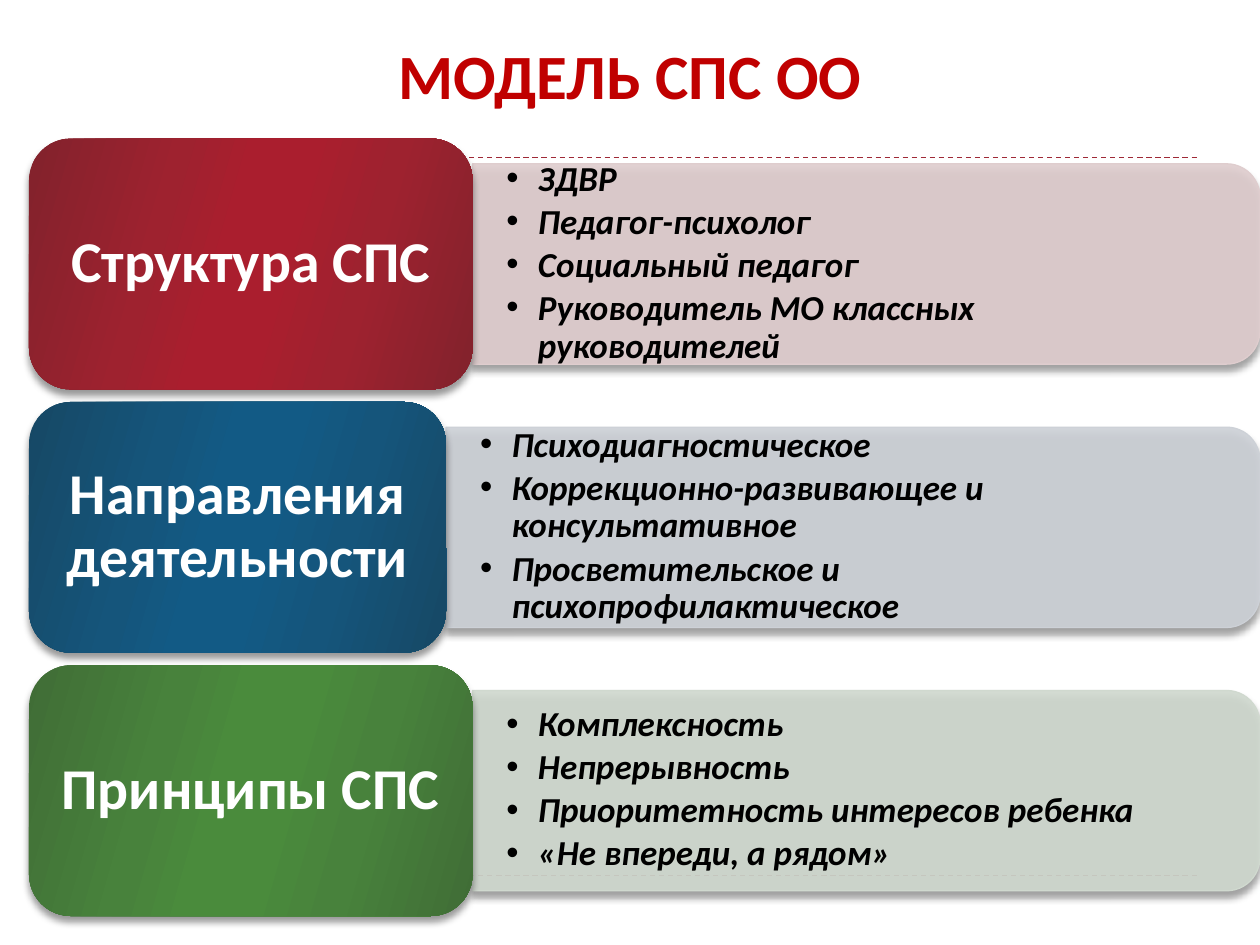
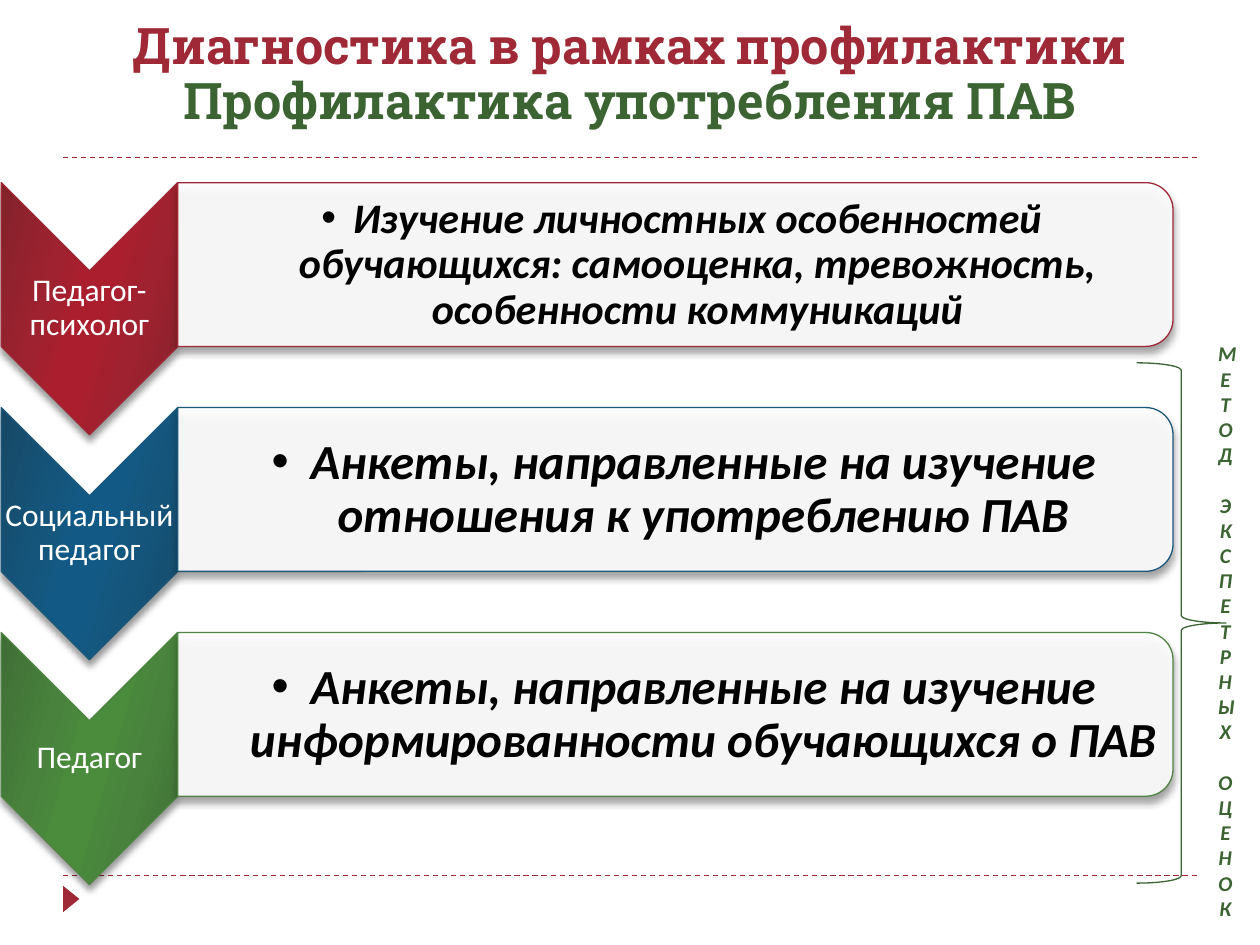
import pptx
import pptx.util
import pptx.dml.color
import pptx.enum.dml
import pptx.enum.shapes
import pptx.enum.text
import pptx.oxml
import pptx.oxml.ns
from lxml import etree

Inches, Pt = pptx.util.Inches, pptx.util.Pt
RGB = pptx.dml.color.RGBColor.from_string
SHAPE = pptx.enum.shapes.MSO_SHAPE
ANCHOR = pptx.enum.text.MSO_ANCHOR
ALIGN = pptx.enum.text.PP_ALIGN
qn = pptx.oxml.ns.qn
NS = pptx.oxml.ns.nsdecls("a")

COLORS = {
    "red": "9F2936", "blue": "1B587C", "green": "4E8542",
    "title_red": "C00000", "dark_green": "3B6432",
    "white": "FFFFFF", "black": "000000",
}
TINTS = {"red": "DFCDCE", "blue": "CDD1D7", "green": "D0D9CF"}
# edge, inner and centre colours of the symmetric gradients
GRADIENTS = {
    "red": ("82222C", "9E222F", "AA1E2E"),
    "blue": ("164865", "15557B", "125A85"),
    "green": ("406D36", "48823C", "4A8B3C"),
}
STOPS = ((0, 0), (30, 1), (45, 2), (55, 2), (73, 1), (100, 0))

BULLET_FONT = {"name": "Calibri", "bold": True, "italic": True}
LABEL_FONT = {"name": "Calibri"}


def add_block(s, kind, box, fill, line=None, turned=False):
    """Add a shadowed shape that fills box; turned means rotated by 90 degrees.

    fill is a hex string (10% transparent) or a tuple of gradient colours.
    """
    x, y, w, h = box
    if turned:
        x, y, w, h = x + (w - h) / 2, y + (h - w) / 2, h, w
    sp = s.shapes.add_shape(kind, *map(Inches, (x, y, w, h)))
    sp.rotation = 90 if turned else 0
    sp.fill.solid()
    props = sp._element.spPr
    solid = props.find(qn("a:solidFill"))
    if isinstance(fill, tuple):
        stops = "".join(
            f'<a:gs pos="{pos * 1000}"><a:srgbClr val="{fill[i]}"/></a:gs>' for pos, i in STOPS)
        props.replace(solid, pptx.oxml.parse_xml(
            f'<a:gradFill {NS} rotWithShape="0"><a:gsLst>{stops}</a:gsLst>'
            '<a:lin ang="960000" scaled="0"/></a:gradFill>'))
    else:
        sp.fill.fore_color.rgb = RGB(fill)
        etree.SubElement(solid[0], qn("a:alpha"), val="90000")
    if line:
        sp.line.color.rgb = RGB(line)
        sp.line.width = Pt(0.75)
    else:
        sp.line.fill.background()
    sp.shadow.inherit = False
    props.find(qn("a:effectLst")).append(pptx.oxml.parse_xml(
        f'<a:outerShdw {NS} blurRad="50800" dist="43000" dir="5400000" rotWithShape="0">'
        '<a:srgbClr val="000000"><a:alpha val="40000"/></a:srgbClr></a:outerShdw>'))


def add_text(s, box, lines, size, color, font, insets=(0.1, 0.05, 0.1, 0.05),
             anchor=ANCHOR.MIDDLE, align=ALIGN.CENTER, spacing=0.9, indent=0):
    """Add a text box with one paragraph per line; an indent makes them bullets."""
    tf = s.shapes.add_textbox(*map(Inches, box)).text_frame
    tf.word_wrap = True
    tf.vertical_anchor = anchor
    for side, inset in zip(("left", "top", "right", "bottom"), insets):
        setattr(tf, f"margin_{side}", Inches(inset))
    for i, line in enumerate(lines):
        p = tf.paragraphs[0] if i == 0 else tf.add_paragraph()
        p.alignment = align
        p.line_spacing = spacing
        if indent:
            p.space_after = Pt(round(size * 0.15, 1))
            pPr = p._p.get_or_add_pPr()
            pPr.set("marL", str(Inches(indent)))
            pPr.set("indent", str(-Inches(indent)))
            etree.SubElement(pPr, qn("a:buFont"), typeface="Arial")
            etree.SubElement(pPr, qn("a:buChar"), char="•")
        r = p.add_run()
        r.text = line
        for key, value in font.items():
            setattr(r.font, key, value)
        r.font.size = Pt(size)
        r.font.color.rgb = RGB(color)
    return tf


prs = pptx.Presentation()
prs.slide_width, prs.slide_height = Inches(10), Inches(7.5)
model, diagnostics = [prs.slides.add_slide(prs.slide_layouts[6]) for _ in range(2)]

# Dashed rules and corner marker on both slides
for s in (model, diagnostics):
    for y in (6.95, 1.25):
        rule = s.shapes.add_connector(
            pptx.enum.shapes.MSO_CONNECTOR.STRAIGHT, *map(Inches, (0.5, y, 9.5, y)))
        rule.line.color.rgb = RGB(COLORS["red"])
        rule.line.width = Pt(0.75)
        rule.line.dash_style = pptx.enum.dml.MSO_LINE.DASH
        etree.SubElement(rule._element.spPr, qn("a:effectLst"))
    marker = s.shapes.add_shape(
        SHAPE.ISOSCELES_TRIANGLE, *map(Inches, (0.46, 7.07, 0.21, 0.13)))
    marker.rotation = 90
    marker.fill.solid()
    marker.fill.fore_color.rgb = RGB(COLORS["red"])
    marker.line.fill.background()
    marker.shadow.inherit = False

# Slide 1: model of the service
add_text(model, (0.5, 0.17, 9, 0.77), ["МОДЕЛЬ СПС ОО"], 36, COLORS["title_red"],
         {"name": "Calibri", "bold": True}, anchor=ANCHOR.BOTTOM, spacing=1.0)

MODEL_ROWS = [
    ("red", 3.52, "Структура СПС",
     ["ЗДВР", "Педагог-психолог", "Социальный педагог",
      "Руководитель МО классных руководителей"]),
    ("blue", 3.31, "Направления деятельности",
     ["Психодиагностическое", "Коррекционно-развивающее и консультативное",
      "Просветительское и психопрофилактическое"]),
    ("green", 3.52, "Принципы СПС",
     ["Комплексность", "Непрерывность", "Приоритетность интересов ребенка",
      "«Не впереди, а рядом»"]),
]
for i, (hue, width, label, points) in enumerate(MODEL_ROWS):
    left, top = 0.23, 1.1 + i * 2.09
    right = left + width
    add_block(model, SHAPE.ROUND_2_SAME_RECTANGLE, (right, top + 0.2, 10 - right, 1.59),
              TINTS[hue], TINTS[hue], turned=True)
    add_text(model, (right, top + 0.27, 9.92 - right, 1.44), points, 20, COLORS["black"],
             BULLET_FONT, (0.27, 0.14, 0.27, 0.14), align=ALIGN.LEFT, indent=0.25)
    add_block(model, SHAPE.ROUNDED_RECTANGLE, (left, top, width, 1.99), GRADIENTS[hue])
    add_text(model, (left + 0.1, top + 0.1, width - 0.2, 1.79), [label], 33, COLORS["white"],
             LABEL_FONT | {"bold": True}, (0.14, 0.07, 0.14, 0.07))

# Slide 2: diagnostics by specialist
tf = add_text(diagnostics, (0.5, 0.17, 9, 0.91),
              ["Диагностика в рамках профилактики", "Профилактика употребления ПАВ"],
              28.8, COLORS["red"], {"name": "Roboto Slab", "bold": True}, anchor=ANCHOR.BOTTOM)
tf.paragraphs[1].runs[0].font.color.rgb = RGB(COLORS["dark_green"])

DIAGNOSTIC_ROWS = [
    ("red", "Педагог-психолог", 24, 0.25, 0.19,
     "Изучение личностных особенностей обучающихся: самооценка, тревожность, "
     "особенности коммуникаций"),
    ("blue", "Социальный педагог", 28, 0.31, 0.22,
     "Анкеты, направленные на изучение отношения к употреблению ПАВ"),
    ("green", "Педагог", 28, 0.31, 0.22,
     "Анкеты, направленные на изучение информированности обучающихся о ПАВ"),
]
for i, (hue, label, size, indent, inset, task) in enumerate(DIAGNOSTIC_ROWS):
    top = 1.45 + i * 1.785
    add_block(diagnostics, SHAPE.CHEVRON, (0.01, top, 1.4, 2), GRADIENTS[hue],
              COLORS[hue], turned=True)
    add_text(diagnostics, (0.01, top + 0.7, 1.4, 0.6), [label], 18, COLORS["white"],
             LABEL_FONT, (0.01,) * 4)
    add_block(diagnostics, SHAPE.ROUND_2_SAME_RECTANGLE, (1.41, top, 7.9, 1.3),
              COLORS["white"], COLORS[hue], turned=True)
    add_text(diagnostics, (1.41, top + 0.07, 7.83, 1.17), [task], size, COLORS["black"],
             BULLET_FONT, (inset, 0.02, 0.02, 0.02), indent=indent)

brace = diagnostics.shapes.add_shape(
    SHAPE.RIGHT_BRACE, *map(Inches, (9.02, 2.88, 0.71, 4.13)))
brace.fill.background()
brace.line.color.rgb = RGB(COLORS["dark_green"])
brace.line.width = Pt(0.75)
brace.shadow.inherit = False
tf = add_text(diagnostics, (9.57, 2.88, 0.31, 4.25), ["МЕТОД ЭКСПЕТРНЫХ ОЦЕНОК"], 12,
              COLORS["dark_green"], BULLET_FONT, spacing=1.0)
tf._txBody.bodyPr.set("vert", "wordArtVert")

prs.save("out.pptx")
